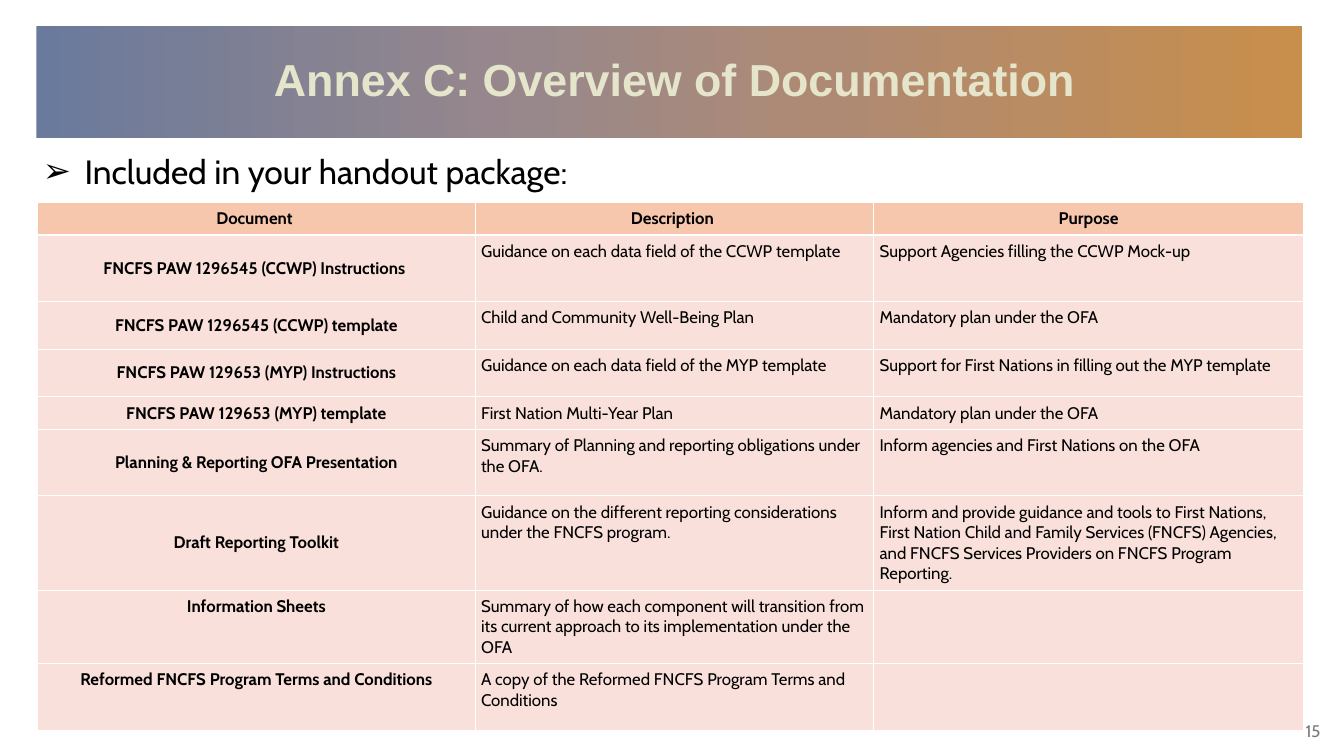
"""Build the Annex C slide listing the documents in the handout package."""
import dataclasses
import typing

import lxml.etree
import pptx
import pptx.dml.color
import pptx.enum.dml
import pptx.enum.shapes
import pptx.enum.text
import pptx.oxml.ns
import pptx.util

WIDTH, HEIGHT = 20, 11.25
MARGIN, CONTENT_WIDTH = 0.027 * WIDTH, 0.942 * WIDTH
BODY_FONT = "Cabin"
ALIGN = pptx.enum.text.PP_ALIGN
ANCHOR = pptx.enum.text.MSO_ANCHOR
COLUMN_WIDTHS = (6.51, 5.93, 6.4)
HEADINGS = ("Document ", "Description ", "Purpose")
BANNER_STOPS = ((0, "6A7A9C"), (39, "99888B"), (62, "AE8A74"), (100, "C88E4B"))


@dataclasses.dataclass(frozen=True)
class Box:
    left: float
    top: float
    width: float
    height: float

    def lengths(self) -> tuple:
        return tuple(pptx.util.Inches(value) for value in dataclasses.astuple(self))


@dataclasses.dataclass(frozen=True)
class Style:
    size: float = 18
    color: str = "000000"
    bold: bool = False
    font: str = BODY_FONT


@dataclasses.dataclass(frozen=True)
class Document:
    name: str
    description: str
    purpose: str = ""
    height: float = 0.99
    anchor: typing.Any = ANCHOR.MIDDLE


DOCUMENTS = (
    Document("FNCFS PAW 1296545 (CCWP) Instructions ",
             "Guidance on each data field of the CCWP template",
             "Support Agencies filling the CCWP Mock-up"),
    Document("FNCFS PAW 1296545 (CCWP) template",
             "Child and Community Well-Being Plan",
             "Mandatory plan under the OFA", 0.71),
    Document("FNCFS PAW 129653 (MYP) Instructions",
             "Guidance on each data field of the MYP template",
             "Support for First Nations in filling out the MYP template", 0.71),
    Document("FNCFS PAW 129653 (MYP) template",
             "First Nation Multi-Year Plan",
             "Mandatory plan under the OFA", 0.43),
    Document("Planning & Reporting OFA Presentation",
             "Summary of Planning and reporting obligations under the OFA.",
             "Inform agencies and First Nations on the OFA"),
    Document("Draft Reporting Toolkit",
             "Guidance on the different reporting considerations under the FNCFS program.",
             "Inform and provide guidance and tools to First Nations, First Nation Child "
             "and Family Services (FNCFS) Agencies, and FNCFS Services Providers on "
             "FNCFS Program Reporting."),
    Document("Information Sheets",
             "Summary of how each component will transition from its current approach "
             "to its implementation under the OFA", anchor=ANCHOR.TOP),
    Document("Reformed FNCFS Program Terms and Conditions",
             "A copy of the Reformed FNCFS Program Terms and Conditions",
             anchor=ANCHOR.TOP),
)


def rgb(value: str) -> pptx.dml.color.RGBColor:
    """Turn a hex string into a colour."""
    return pptx.dml.color.RGBColor.from_string(value)


def add_node(parent: typing.Any, tag: str, **attributes: typing.Any) -> typing.Any:
    """Append a drawing element to its parent."""
    values = {key: str(value) for key, value in attributes.items()}
    return lxml.etree.SubElement(parent, pptx.oxml.ns.qn(tag), values)


def write(frame: typing.Any, text: str, style: Style, align: typing.Any = ALIGN.LEFT) -> typing.Any:
    """Write one run into the first paragraph and return the paragraph."""
    frame.word_wrap = True
    para = frame.paragraphs[0]
    para.alignment = align
    span = para.add_run()
    span.text = text
    span.font.name, span.font.size = style.font, pptx.util.Pt(style.size)
    span.font.bold = style.bold
    span.font.color.rgb = rgb(style.color)
    return para


def add_banner(page: typing.Any, box: Box, title: str) -> None:
    """Draw the gradient title banner."""
    banner = page.shapes.add_shape(pptx.enum.shapes.MSO_SHAPE.RECTANGLE, *box.lengths())
    banner.shadow.inherit = False
    banner.line.fill.background()
    banner.fill.gradient()
    banner.fill.gradient_angle = 0
    stops = banner.fill.gradient_stops[0]._gs.getparent()
    for stop in list(stops):
        stops.remove(stop)
    for percent, color in BANNER_STOPS:
        add_node(add_node(stops, "a:gs", pos=percent * 1000), "a:srgbClr", val=color)
    frame = banner.text_frame
    frame.vertical_anchor = ANCHOR.MIDDLE
    frame.margin_left = frame.margin_right = pptx.util.Inches(0.15)
    frame.margin_top = frame.margin_bottom = pptx.util.Inches(0.07)
    para = write(frame, title, Style(48, "E5E5CC", True, "Arial"), ALIGN.CENTER)
    para.line_spacing = 0.9


def add_bullet(page: typing.Any, box: Box, text: str) -> None:
    """Draw the arrow-bulleted lead line."""
    frame = page.shapes.add_textbox(*box.lengths()).text_frame
    para = write(frame, text, Style(36))
    settings = para._p.get_or_add_pPr()
    indent = pptx.util.Inches(0.62)
    settings.set("marL", str(indent))
    settings.set("indent", str(-indent))
    add_node(settings, "a:buFont", typeface="Arial")
    add_node(settings, "a:buChar", char="➢")


def add_borders(cell: typing.Any, bottom: float) -> None:
    """Give a cell white borders with its own bottom weight."""
    settings = cell._tc.get_or_add_tcPr()
    for side, weight in (("L", 1), ("R", 1), ("T", 1), ("B", bottom)):
        line = add_node(settings, f"a:ln{side}", w=pptx.util.Pt(weight))
        add_node(add_node(line, "a:solidFill"), "a:srgbClr", val="FFFFFF")


def fill_cell(cell: typing.Any, text: str, bold: bool, align: typing.Any,
              anchor: typing.Any, color: str, bottom: float = 1) -> None:
    """Style one table cell and write its text."""
    add_borders(cell, bottom)
    cell.fill.solid()
    cell.fill.fore_color.rgb = rgb(color)
    cell.margin_left = cell.margin_right = pptx.util.Inches(0.09)
    cell.margin_top = cell.margin_bottom = pptx.util.Inches(0.09)
    cell.vertical_anchor = anchor
    if text:
        write(cell.text_frame, text, Style(bold=bold), align)


def add_documents(page: typing.Any, box: Box) -> None:
    """Draw the table of documents."""
    table = page.shapes.add_table(len(DOCUMENTS) + 1, len(HEADINGS), *box.lengths()).table
    table.first_row = table.horz_banding = False
    for column, width in zip(table.columns, COLUMN_WIDTHS):
        column.width = pptx.util.Inches(width)
    table.rows[0].height = pptx.util.Inches(0.43)
    for column, heading in enumerate(HEADINGS):
        fill_cell(table.cell(0, column), heading, True, ALIGN.CENTER, ANCHOR.TOP, "F6C6AD", 3)
    for row, document in enumerate(DOCUMENTS, 1):
        table.rows[row].height = pptx.util.Inches(document.height)
        fill_cell(table.cell(row, 0), document.name, True, ALIGN.CENTER,
                  document.anchor, "F9E0DB")
        for column, text in enumerate((document.description, document.purpose), 1):
            fill_cell(table.cell(row, column), text, False, ALIGN.LEFT, ANCHOR.TOP, "F9E0DB")


def add_page_number(page: typing.Any, box: Box, number: str) -> None:
    """Draw the page number in the lower right corner."""
    frame = page.shapes.add_textbox(*box.lengths()).text_frame
    frame.vertical_anchor = ANCHOR.MIDDLE
    write(frame, number, Style(color="797979"), ALIGN.RIGHT)


def main() -> None:
    """Build and save the deck."""
    deck = pptx.Presentation()
    deck.slide_width, deck.slide_height = pptx.util.Inches(WIDTH), pptx.util.Inches(HEIGHT)
    page = deck.slides.add_slide(deck.slide_layouts[6])
    add_documents(page, Box(0.028 * WIDTH, 3.01, CONTENT_WIDTH, 7.81))
    add_banner(page, Box(MARGIN, 0.38, CONTENT_WIDTH, 1.68), " Annex C: Overview of Documentation")
    add_bullet(page, Box(MARGIN, 2.2, CONTENT_WIDTH, 0.71), "Included in your handout package:")
    add_page_number(page, Box(15.25, 10.58, 4.5, 0.6), "15")
    deck.save("out.pptx")


if __name__ == "__main__":
    main()
